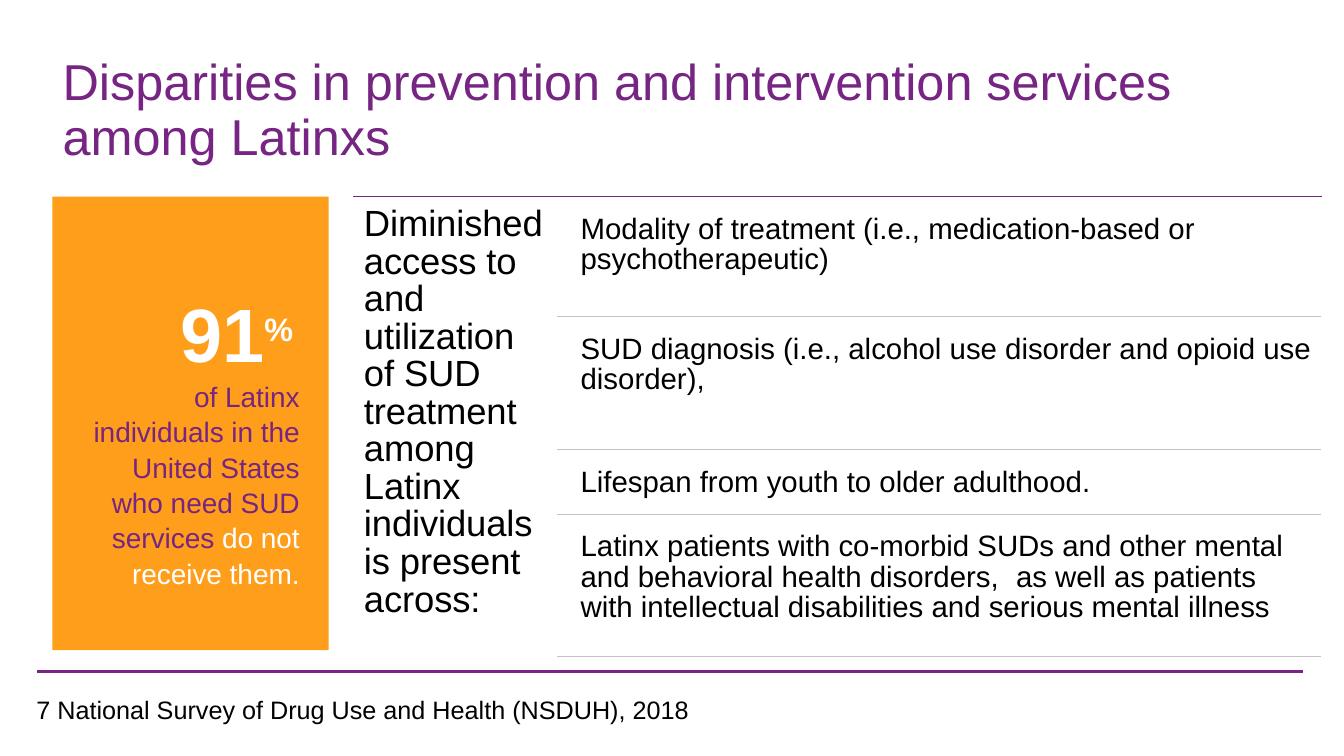
import pptx
import pptx.dml.color
import pptx.enum.shapes
import pptx.enum.text
import pptx.util
from dataclasses import dataclass
from lxml import etree

A = "{http://schemas.openxmlformats.org/drawingml/2006/main}"
ALIGN = pptx.enum.text.PP_ALIGN
WIDE, HIGH = pptx.util.Inches(13.333), pptx.util.Inches(7.5)


@dataclass(frozen=True)
class Theme:
    face: str = "Arial"
    plum: str = "772583"
    pale: str = "CABDCD"
    gold: str = "FF9E1B"
    white: str = "FFFFFF"
    black: str = "000000"
    title: float = 36
    big: float = 54
    sign: float = 39.8
    label: float = 20
    lead: float = 26
    row: float = 21
    note: float = 18


T = Theme()

# Right side: text, box width, box height, rule below (percent of slide)
TOP = 26
ROWS = [
    ("Modality of treatment (i.e., medication-based or psychotherapeutic)",
     46.5, 9, 41.87),
    ("SUD diagnosis (i.e., alcohol use disorder and opioid use disorder),",
     54.75, 9, 59.47),
    ("Lifespan from youth to older adulthood.", 38.5, 5, 68),
    ("Latinx patients with co-morbid SUDs and other mental and behavioral "
     "health disorders,\tas well as patients with intellectual disabilities "
     "and serious mental illness", 52.5, 13, 86.8),
]


def across(share):
    return int(WIDE * share / 100)


def down(share):
    return int(HIGH * share / 100)


def spot(x, y, w, h):
    return across(x), down(y), across(w), down(h)


def rgb(code):
    return pptx.dml.color.RGBColor.from_string(code)


def apply(item, form):
    for name, value in form.items():
        setattr(item, name, value)


def setup(frame, top=0):
    """Clear the margins of a text frame and pin its text to the top."""
    apply(frame, {
        "word_wrap": True,
        "auto_size": pptx.enum.text.MSO_AUTO_SIZE.NONE,
        "vertical_anchor": pptx.enum.text.MSO_ANCHOR.TOP,
        "margin_left": 0, "margin_right": 0, "margin_bottom": 0,
        "margin_top": pptx.util.Inches(top)})


def indent(para, **sides):
    props = para._p.get_or_add_pPr()
    for name, size in sides.items():
        props.set(name, str(pptx.util.Inches(size)))


def write(para, text, size, color, bold=False, **extra):
    """Add one run; extra holds raw run settings such as spc."""
    run = para.add_run()
    run.text = text
    apply(run.font, {"name": T.face, "size": pptx.util.Pt(size),
                     "bold": bold})
    run.font.color.rgb = rgb(color)
    for name, value in extra.items():
        run._r.get_or_add_rPr().set(name, str(value))


def block(slide, text, place, size, top, lead=1.0, **extra):
    """Add a left-aligned text box and return its paragraph."""
    box = slide.shapes.add_textbox(*spot(*place))
    setup(box.text_frame, top)
    para = box.text_frame.paragraphs[0]
    apply(para, {"alignment": ALIGN.LEFT, "line_spacing": lead})
    indent(para, marL=0.01)
    write(para, text, size, T.black, **extra)
    return para


def rule(slide, left, right, y, color, width):
    line = slide.shapes.add_connector(
        pptx.enum.shapes.MSO_CONNECTOR.STRAIGHT,
        across(left), down(y), across(right), down(y))
    line.line.color.rgb = rgb(color)
    line.line.width = pptx.util.Pt(width)
    etree.SubElement(line._element.spPr, A + "effectLst")


def head(slide, text):
    title = slide.shapes.title
    apply(title, dict(zip(("left", "top", "width", "height"),
                          spot(4.58, 6.4, 82.75, 15.6))))
    setup(title.text_frame, 0.08)
    para = title.text_frame.paragraphs[0]
    apply(para, {"alignment": ALIGN.LEFT,
                 "line_spacing": pptx.util.Pt(38.9)})
    indent(para, marL=0.01)
    write(para, text, T.title, T.plum)


def panel(slide):
    card = slide.shapes.add_shape(
        pptx.enum.shapes.MSO_SHAPE.RECTANGLE, *spot(3.9, TOP, 20.56, 60))
    card.shadow.inherit = False
    card.fill.solid()
    card.fill.fore_color.rgb = rgb(T.gold)
    card.line.fill.background()
    setup(card.text_frame, 0.9)

    # Figure
    para = card.text_frame.paragraphs[0]
    para.alignment = ALIGN.LEFT
    indent(para, marL=1.27)
    write(para, "91", T.big, T.white, True, spc=-20)
    write(para, "%", T.sign, T.white, True, baseline=39000)

    # Label
    para = card.text_frame.add_paragraph()
    apply(para, {"alignment": ALIGN.RIGHT, "line_spacing": 1.05})
    indent(para, marL=0.38, marR=0.29, indent=1.01)
    write(para, "of Latinx individuals in the United States who need SUD "
          "services ", T.label, T.plum, spc=-5)
    write(para, "do not receive them.", T.label, T.white, spc=-5)


def tab(para, place):
    stops = etree.SubElement(para._p.get_or_add_pPr(), A + "tabLst")
    etree.SubElement(stops, A + "tab", algn="l",
                     pos=str(pptx.util.Inches(place)))


def rows(slide):
    y = TOP
    for text, width, height, base in ROWS:
        para = block(slide, text, (43.13, y + 1.6, width, height), T.row,
                     0.06, pptx.util.Pt(21.7))
        if "\t" in text:
            tab(para, 4.32)
        rule(slide, 41.48, 98.27, base, T.pale, 0.48)
        y = base


def main():
    deck = pptx.Presentation()
    apply(deck, {"slide_width": WIDE, "slide_height": HIGH})
    slide = deck.slides.add_slide(deck.slide_layouts[5])

    # Title and left panel
    head(slide, "Disparities in prevention and intervention services "
         "among Latinxs")
    panel(slide)

    # Lead text and ruled rows
    rule(slide, 26.26, 98.35, TOP, T.plum, 0.48)
    block(slide, "Diminished access to and utilization of SUD treatment "
          "among Latinx individuals is present across:",
          (27.01, 26.4, 13.65, 56), T.lead, 0.07, 0.86, spc=-10)
    rows(slide)

    # Footer
    rule(slide, 2.78, 96.92, 88.8, T.plum, 2.28)
    block(slide, "7 National Survey of Drug Use and Health (NSDUH), 2018",
          (2.63, 91.73, 50, 4.4), T.note, 0.01)
    deck.save("out.pptx")


if __name__ == "__main__":
    main()
